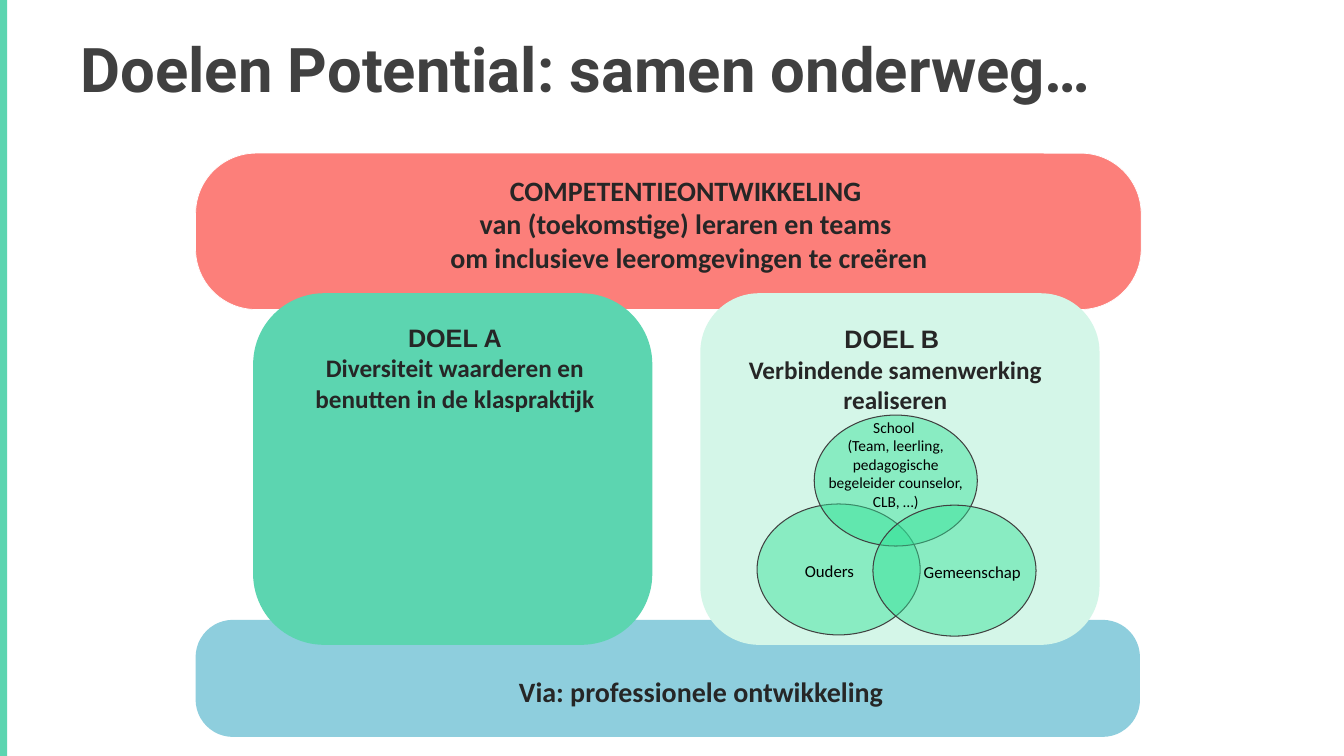
from lxml.etree import SubElement
from pptx import Presentation
from pptx.dml.color import RGBColor
from pptx.enum.shapes import MSO_SHAPE
from pptx.enum.text import PP_ALIGN
from pptx.oxml.ns import qn
from pptx.util import Cm, Pt

COLORS = {
    "mint": "5CD5B0",
    "pale mint": "D4F6E8",
    "coral": "FC7F7A",
    "blue": "8ECEDD",
    "circle": "32E297",
    "white": "FFFFFF",
    "black": "000000",
    "dark": "262626",
    "grey": "404040",
}

FORMATS = {
    "title": {"name": "Roboto", "size": Pt(44), "bold": True},
    "band": {"name": "Calibri", "size": Pt(20), "bold": True},
    "goal name": {"name": "Arial", "size": Pt(18), "bold": True},
    "goal": {"name": "Calibri", "size": Pt(18), "bold": True},
    "circle": {"name": "Calibri", "size": Pt(12), "bold": False},
    "small": {"name": "Calibri", "size": Pt(11), "bold": False},
}

presentation = Presentation()
presentation.slide_width = Cm(33.87)
presentation.slide_height = Cm(19.05)
slide = presentation.slides.add_slide(presentation.slide_layouts[6])


def add_filled_shape(kind, box, fill, line=None, width=0.5):
    shape = slide.shapes.add_shape(kind, *[Cm(length) for length in box])
    shape.shadow.inherit = False
    shape.fill.solid()
    shape.fill.fore_color.rgb = RGBColor.from_string(COLORS[fill])
    if line:
        shape.line.color.rgb = RGBColor.from_string(COLORS[line])
        shape.line.width = Pt(width)
    else:
        shape.line.fill.background()
    return shape


add_filled_shape(MSO_SHAPE.RECTANGLE, (0, 0, 0.18, 19.05), "mint")

panels = [
    ((4.93, 15.62, 23.8, 2.95), 0.319, "blue", None),
    ((4.93, 3.86, 23.83, 3.94), 0.387, "coral", "white"),
    ((17.65, 7.39, 10.06, 8.86), 0.167, "pale mint", None),
    ((6.38, 7.39, 10.06, 8.86), 0.202, "mint", None),
]
for box, rounding, fill, line in panels:
    panel = add_filled_shape(MSO_SHAPE.ROUNDED_RECTANGLE, box, fill, line)
    panel.adjustments[0] = rounding

for left, top in [(19.08, 12.7), (20.52, 10.46), (22, 12.73)]:
    circle = add_filled_shape(MSO_SHAPE.OVAL, (left, top, 4.11, 3.3), "circle", "grey", 0.75)
    fill_color = circle.fill._xPr.find(qn("a:solidFill"))[0]
    SubElement(fill_color, qn("a:alpha"), val="46000")

texts = [
    ((20.52, 10.41, 4.11, 2.62), "black", PP_ALIGN.CENTER, [
        ("School ", "small"),
        ("(Team, leerling, pedagogische begeleider counselor, CLB, …)", "small"),
    ]),
    ((18.85, 14, 4.11, 0.76), "black", PP_ALIGN.CENTER, [("Ouders", "circle")]),
    ((22.45, 14.02, 4.11, 0.76), "black", PP_ALIGN.CENTER, [("Gemeenschap", "circle")]),
    ((6.78, 8, 9.37, 4.01), "dark", PP_ALIGN.CENTER, [
        ("DOEL A", "goal name"),
        ("Diversiteit waarderen en benutten in de klaspraktijk", "goal"),
    ]),
    ((17.88, 8.03, 9.37, 2.57), "dark", PP_ALIGN.CENTER, [
        ("DOEL B ", "goal name"),
        ("Verbindende samenwerking realiseren", "goal"),
    ]),
    ((9.09, 4.24, 16.54, 2.82), "dark", PP_ALIGN.CENTER, [
        ("COMPETENTIEONTWIKKELING ", "band"),
        ("van (toekomstige) leraren en teams ", "band"),
        ("om inclusieve leeromgevingen te creëren", "band"),
    ]),
    ((9.4, 16.87, 16.54, 1.12), "dark", PP_ALIGN.CENTER, [
        ("Via: professionele ontwikkeling", "band"),
    ]),
    ((1.78, 0.66, 30.1, 2.13), "grey", PP_ALIGN.LEFT, [
        ("Doelen Potential: samen onderweg…", "title"),
    ]),
]
for box, color, alignment, lines in texts:
    text_frame = slide.shapes.add_textbox(*[Cm(length) for length in box]).text_frame
    text_frame.word_wrap = True
    for index, (text, style) in enumerate(lines):
        paragraph = text_frame.add_paragraph() if index else text_frame.paragraphs[0]
        paragraph.alignment = alignment
        run = paragraph.add_run()
        run.text = text
        run.font.color.rgb = RGBColor.from_string(COLORS[color])
        for attribute, value in FORMATS[style].items():
            setattr(run.font, attribute, value)

presentation.save("out.pptx")
